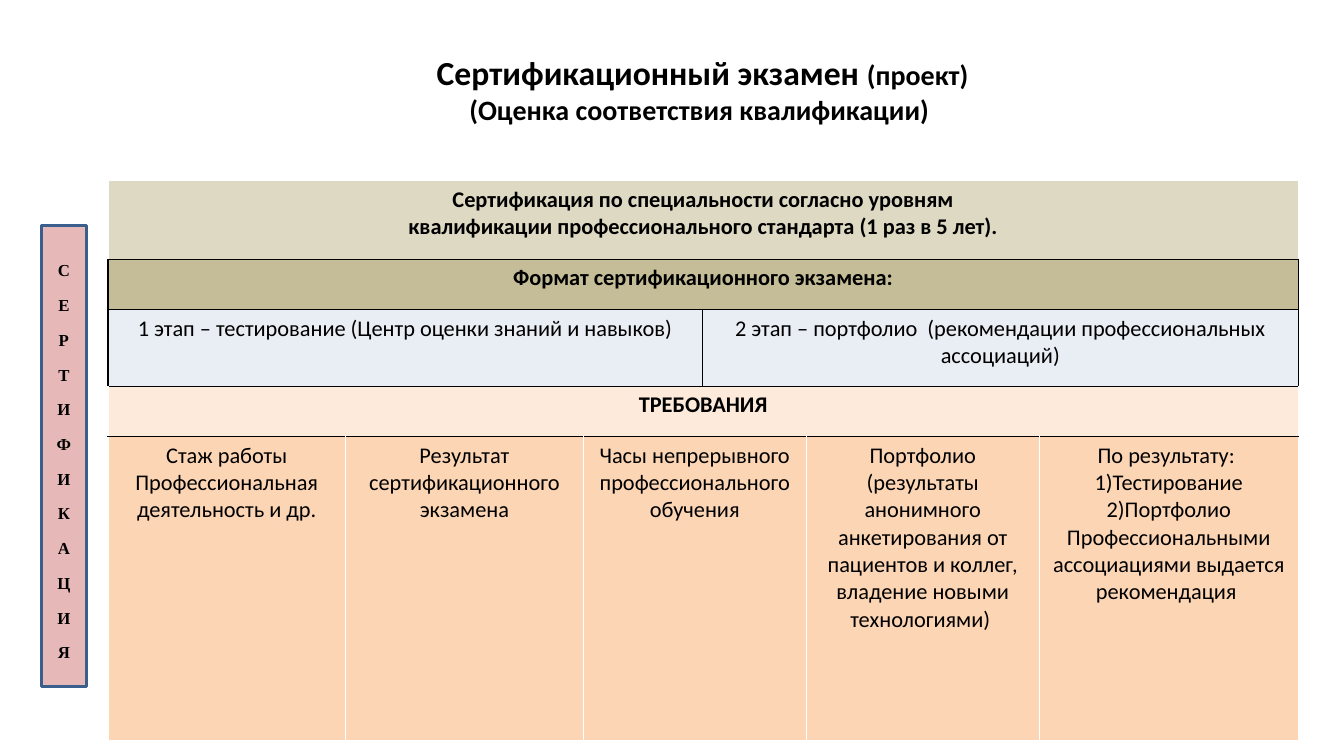
from dataclasses import dataclass

from lxml.etree import SubElement
from pptx import Presentation
from pptx.dml.color import RGBColor
from pptx.enum.shapes import MSO_SHAPE as Shape
from pptx.enum.text import MSO_ANCHOR as Anchor, PP_ALIGN as Align
from pptx.oxml.ns import qn
from pptx.util import Cm, Pt


@dataclass(frozen=True)
class Theme:
    font: str = "Calibri"
    banner_font: str = "Times New Roman"
    title_size: int = 24
    subtitle_size: int = 20
    table_size: int = 16
    banner_size: int = 12
    ink: str = "000000"
    paper: str = "FFFFFF"
    banner_fill: str = "E6B9B8"
    banner_line: str = "3A5F8C"
    heading: str = "DDD9C3"
    format: str = "C4BD97"
    stage: str = "E9EDF4"
    demand: str = "FDEADA"
    detail: str = "FCD5B5"


@dataclass(frozen=True)
class Row:
    """A table row; each cell is (column span, text) and sides colours its vertical borders."""
    height: float
    fill: str
    bold: bool
    sides: str
    top: str
    bottom: str
    cells: tuple


THEME = Theme()
INK, PAPER = THEME.ink, THEME.paper
COLUMN_WIDTHS = (5.99, 5.99, 3, 2.62, 5.87, 6.53)
ROWS = (
    Row(1.98, THEME.heading, True, PAPER, PAPER, INK, (
        (6, "Сертификация по специальности согласно уровням\n"
            "квалификации профессионального стандарта (1 раз в 5 лет)."),
    )),
    Row(1.27, THEME.format, True, INK, INK, INK, (
        (6, "Формат сертификационного экзамена:"),
    )),
    Row(1.93, THEME.stage, False, INK, INK, INK, (
        (3, "1 этап – тестирование (Центр оценки знаний и навыков)"),
        (3, "2 этап – портфолио  (рекомендации профессиональных ассоциаций)"),
    )),
    Row(1.27, THEME.demand, True, PAPER, INK, INK, (
        (6, "ТРЕБОВАНИЯ"),
    )),
    Row(7.67, THEME.detail, False, PAPER, INK, PAPER, (
        (1, "Стаж работы\nПрофессиональная деятельность и др."),
        (1, "Результат сертификационного экзамена"),
        (2, "Часы непрерывного профессионального обучения"),
        (1, "Портфолио (результаты анонимного анкетирования от пациентов "
            "и коллег, владение новыми технологиями) "),
        (1, "По результату: \n1)Тестирование\n2)Портфолио\n"
            "Профессиональными ассоциациями выдается рекомендация "),
    )),
)


def rgb(code):
    return RGBColor.from_string(code)


def set_border(cell, side, color):
    """Draw a one-point border; side is L, R, T or B. Call before setting the fill."""
    line = SubElement(cell._tc.get_or_add_tcPr(), qn(f"a:ln{side}"), w=str(Pt(1)))
    SubElement(SubElement(line, qn("a:solidFill")), qn("a:srgbClr"), val=color)


class SlideBuilder:
    def __init__(self, slide, theme):
        self.slide = slide
        self.theme = theme

    def style(self, para, size, bold, font=None):
        para.alignment = Align.CENTER
        para.font.name = font or self.theme.font
        para.font.size = Pt(size)
        para.font.bold = bold
        para.font.color.rgb = rgb(self.theme.ink)

    def title(self, left, top, width, height, main, note, subtitle):
        box = self.slide.shapes.add_textbox(Cm(left), Cm(top), Cm(width), Cm(height))
        box.fill.solid()
        box.fill.fore_color.rgb = rgb(self.theme.paper)
        frame = box.text_frame
        frame.word_wrap = True
        frame.vertical_anchor = Anchor.MIDDLE
        para = frame.paragraphs[0]
        self.style(para, self.theme.subtitle_size, True)
        span = para.add_run()
        span.text = main
        span.font.size = Pt(self.theme.title_size)
        para.add_run().text = note
        para.add_line_break()
        para.add_run().text = subtitle

    def banner(self, left, top, width, height, word):
        """Add a narrow box with one letter of the word on each line."""
        box = self.slide.shapes.add_shape(
            Shape.RECTANGLE, Cm(left), Cm(top), Cm(width), Cm(height))
        box.shadow.inherit = False
        box.fill.solid()
        box.fill.fore_color.rgb = rgb(self.theme.banner_fill)
        box.line.color.rgb = rgb(self.theme.banner_line)
        box.line.width = Pt(2)
        frame = box.text_frame
        frame.word_wrap = True
        frame.vertical_anchor = Anchor.MIDDLE
        frame.text = "\n".join(word)
        for para in frame.paragraphs:
            self.style(para, self.theme.banner_size, True, self.theme.banner_font)
            para.line_spacing = 1.5
            para.space_before = Pt(3.2)

    def table(self, left, top, widths, rows):
        frame = self.slide.shapes.add_table(
            len(rows), len(widths), Cm(left), Cm(top),
            Cm(sum(widths)), Cm(sum(row.height for row in rows)))
        table = frame.table
        table.first_row = table.horz_banding = False
        for column, width in zip(table.columns, widths):
            column.width = Cm(width)
        for index, row in enumerate(rows):
            table.rows[index].height = Cm(row.height)
            start = 0
            for span, text in row.cells:
                self.cell_group(table, index, start, span, row, text)
                start += span

    def cell_group(self, table, index, start, span, row, text):
        """Fill one cell that covers span columns."""
        last = start + span - 1
        for column in range(start, last + 1):
            cell = table.cell(index, column)
            if column == start:
                set_border(cell, "L", row.sides)
            if column in (start, last):
                set_border(cell, "R", row.sides)
            set_border(cell, "T", row.top)
            set_border(cell, "B", row.bottom)
            cell.fill.solid()
            cell.fill.fore_color.rgb = rgb(row.fill)
        origin = table.cell(index, start)
        if span > 1:
            origin.merge(table.cell(index, last))
        origin.margin_left = origin.margin_right = Cm(0.18)
        origin.margin_top = origin.margin_bottom = Cm(0.13)
        origin.text = text
        for para in origin.text_frame.paragraphs:
            self.style(para, self.theme.table_size, row.bold)


def main():
    deck = Presentation()
    deck.slide_width, deck.slide_height = Cm(33.87), Cm(19.05)
    page = SlideBuilder(deck.slides.add_slide(deck.slide_layouts[6]), THEME)
    page.title(5.97, 0.69, 23.47, 3.12, "Сертификационный экзамен ",
               "(проект)", "(Оценка соответствия квалификации) ")
    page.banner(1.04, 5.69, 1.14, 11.61, "СЕРТИФИКАЦИЯ")
    page.table(2.72, 4.55, COLUMN_WIDTHS, ROWS)
    deck.save("out.pptx")


if __name__ == "__main__":
    main()
